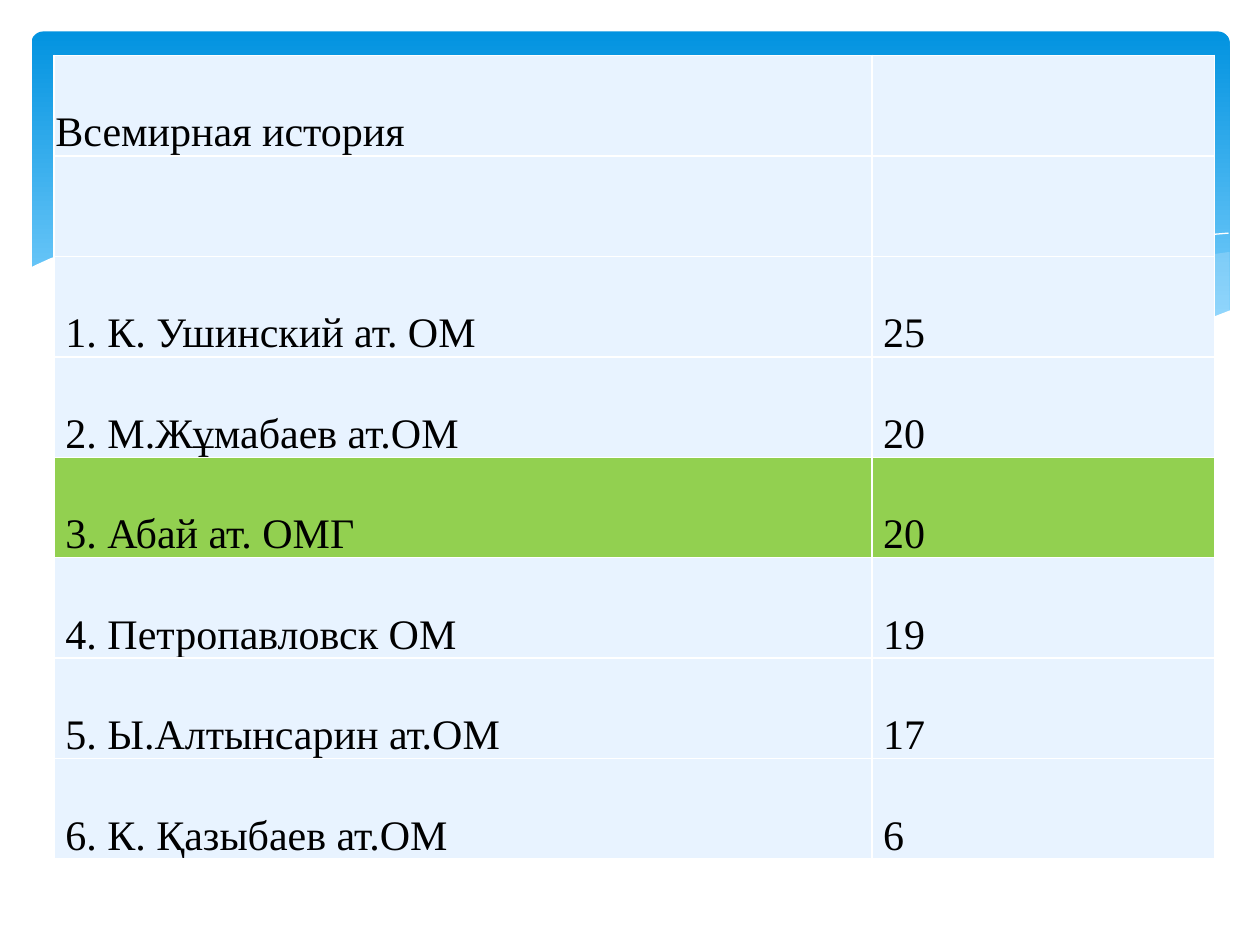
import dataclasses
import typing

import lxml.etree
import pptx
import pptx.dml.color
import pptx.enum.shapes
import pptx.enum.text
import pptx.oxml.ns
import pptx.util

RGB = pptx.dml.color.RGBColor
WHITE = RGB(0xFF, 0xFF, 0xFF)
BLACK = RGB(0, 0, 0)
DEEP = RGB(0x02, 0x93, 0xE0)
SKY = RGB(0x83, 0xD3, 0xFE)
MIST = RGB(0xC6, 0xE7, 0xFC)
PALE = RGB(0xE8, 0xF3, 0xFF)
GREEN = RGB(0x92, 0xD0, 0x50)
FONT = "Times New Roman"

# The slide is a grid of 1000 columns and 750 rows
WIDE, HIGH = pptx.util.Inches(10), pptx.util.Inches(7.5)
UNIT = WIDE // 1000


@dataclasses.dataclass(frozen=True)
class Wave:
    points: tuple[tuple[int, int], ...]
    fill: typing.Optional[RGB] = None
    alpha: int = 100


@dataclasses.dataclass(frozen=True)
class Entry:
    name: str = ""
    score: str = ""
    fill: RGB = PALE
    indent: int = 9


WAVES = (
    # Right swell
    Wave(((975, 200), (948, 204), (921, 210), (891, 216), (861, 223),
          (805, 237), (753, 248), (706, 257), (661, 265), (691, 269),
          (719, 272), (745, 275), (769, 277), (803, 278), (835, 277),
          (863, 275), (889, 272), (913, 267), (935, 262), (949, 257),
          (963, 252), (976, 247), (976, 200)), MIST, 29),
    # Middle swell
    Wave(((893, 273), (866, 269), (807, 260), (741, 247), (668, 231),
          (629, 222), (598, 214), (569, 208), (541, 203), (514, 198),
          (489, 194), (442, 189), (399, 186), (361, 185), (328, 187),
          (286, 191), (323, 196), (362, 203), (404, 211), (449, 222),
          (530, 240), (601, 255), (650, 264), (695, 270), (736, 275),
          (773, 277), (807, 278), (838, 278), (867, 276), (893, 273)),
         MIST, 40),
    # Thin crests
    Wave(((309, 195), (328, 192), (353, 189), (387, 187), (433, 187),
          (469, 189), (510, 192), (556, 197), (608, 204), (665, 213),
          (727, 226), (795, 241), (869, 261), (907, 272))),
    Wave(((613, 257), (653, 246), (695, 235), (748, 223), (806, 210),
          (866, 199), (895, 194), (924, 190), (951, 187), (975, 185))),
    # White front that cuts off the band
    Wave(((977, 246), (959, 253), (940, 259), (920, 265), (899, 269),
          (875, 273), (850, 275), (823, 277), (793, 276), (761, 275),
          (726, 272), (688, 268), (648, 262), (603, 254), (555, 245),
          (503, 233), (447, 220), (391, 207), (340, 197), (292, 190),
          (250, 186), (211, 184), (161, 184), (132, 186), (106, 189),
          (85, 193), (67, 197), (52, 201), (40, 205), (29, 210),
          (23, 213), (23, 329), (977, 329), (977, 246)), WHITE),
)

ROWS = (
    Entry("Всемирная история", indent=1),
    Entry(),
    Entry("1. К. Ушинский ат. ОМ", "25"),
    Entry("2. М.Жұмабаев ат.ОМ", "20"),
    Entry("3. Абай ат. ОМГ", "20", GREEN),
    Entry("4. Петропавловск ОМ", "19"),
    Entry("5. Ы.Алтынсарин ат.ОМ", "17"),
    Entry("6. К. Қазыбаев ат.ОМ", "6"),
)


def add_node(parent: typing.Any, tag: str, **attrs: str) -> typing.Any:
    return lxml.etree.SubElement(parent, pptx.oxml.ns.qn(tag), **attrs)


def draw_band(shapes: typing.Any) -> None:
    box = (25 * UNIT, 25 * UNIT, 951 * UNIT, 270 * UNIT)
    kind = pptx.enum.shapes.MSO_SHAPE.ROUNDED_RECTANGLE
    band = shapes.add_shape(kind, *box)
    band.adjustments[0] = 0.034
    band.shadow.inherit = False
    band.line.fill.background()
    band.fill.gradient()
    band.fill.gradient_angle = 270
    for stop, tint, place in zip(band.fill.gradient_stops, (DEEP, SKY), (0, 0.9)):
        stop.color.rgb = tint
        stop.position = place


def draw_wave(shapes: typing.Any, wave: Wave) -> None:
    pen = shapes.build_freeform(*wave.points[0], scale=UNIT)
    pen.add_line_segments(wave.points[1:], close=wave.fill is not None)
    shape = pen.convert_to_shape()
    shape.shadow.inherit = False
    if wave.fill is None:
        shape.fill.background()
        shape.line.color.rgb = WHITE
        shape.line.width = pptx.util.Pt(0)
        return
    shape.line.fill.background()
    shape.fill.solid()
    shape.fill.fore_color.rgb = wave.fill
    if wave.alpha < 100:
        tint = shape.fill._xPr.find(".//" + pptx.oxml.ns.qn("a:srgbClr"))
        add_node(tint, "a:alpha", val=str(wave.alpha * 1000))


def style_cell(cell: typing.Any, text: str, row: Entry) -> None:
    # Borders come before the fill in the cell's XML
    props = cell._tc.get_or_add_tcPr()
    for side in ("a:lnL", "a:lnR", "a:lnT", "a:lnB"):
        edge = add_node(props, side, w=str(pptx.util.Pt(1)))
        add_node(add_node(edge, "a:solidFill"), "a:srgbClr", val=str(WHITE))
    cell.fill.solid()
    cell.fill.fore_color.rgb = row.fill
    if not text:
        return
    cell.vertical_anchor = pptx.enum.text.MSO_ANCHOR.BOTTOM
    cell.margin_left = row.indent * UNIT
    cell.margin_top = cell.margin_right = UNIT
    cell.margin_bottom = 0
    cell.text_frame.text = text
    font = cell.text_frame.paragraphs[0].runs[0].font
    font.name, font.size = FONT, pptx.util.Pt(24)
    font.color.rgb = BLACK


def draw_table(shapes: typing.Any) -> None:
    widths, height = (649, 272), 638 * UNIT
    frame = shapes.add_table(len(ROWS), len(widths), 43 * UNIT, 44 * UNIT,
                             sum(widths) * UNIT, height)
    table = frame.table
    table.first_row = table.horz_banding = False
    for col, width in zip(table.columns, widths):
        col.width = width * UNIT
    for line, row in zip(table.rows, ROWS):
        line.height = height // len(ROWS)
        for cell, text in zip(line.cells, (row.name, row.score)):
            style_cell(cell, text, row)


def main() -> None:
    deck = pptx.Presentation()
    deck.slide_width, deck.slide_height = WIDE, HIGH
    shapes = deck.slides.add_slide(deck.slide_layouts[6]).shapes
    # Backdrop
    draw_band(shapes)
    for wave in WAVES:
        draw_wave(shapes, wave)
    # Results
    draw_table(shapes)
    deck.save("out.pptx")


if __name__ == "__main__":
    main()
